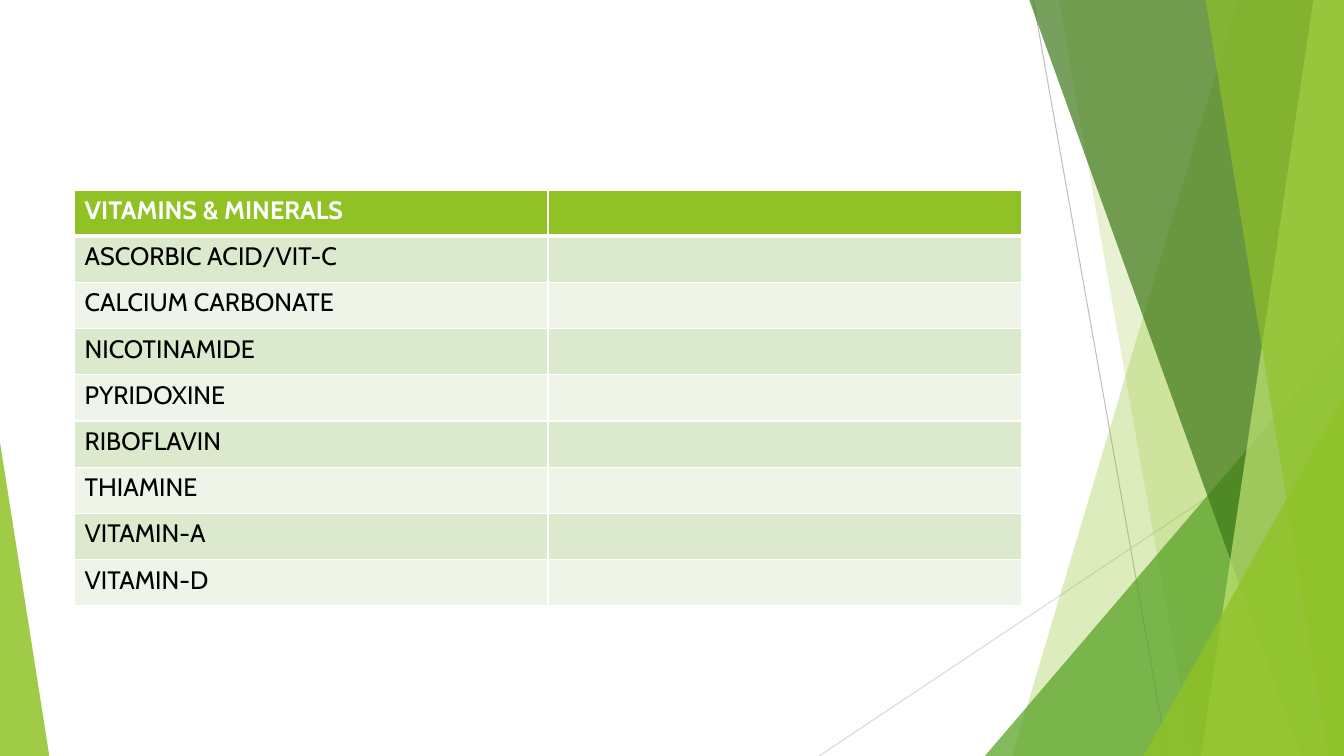
"""Build the vitamins and minerals table slide with its green facet backdrop."""
from lxml.etree import SubElement
from pptx import Presentation
from pptx.dml.color import RGBColor
from pptx.enum.shapes import MSO_CONNECTOR, MSO_SHAPE
from pptx.oxml.ns import qn
from pptx.util import Pt

PX = 9525
WIDTH, HEIGHT = 1280, 720
LIME = "90C226"
ROW_HEIGHT, COLUMN_WIDTH = 44, 451


def paint(color_format, color):
    color_format.rgb = RGBColor.from_string(color)


presentation = Presentation()
presentation.slide_width = WIDTH * PX
presentation.slide_height = HEIGHT * PX
slide = presentation.slides.add_slide(presentation.slide_layouts[6])

rays = [
    (984, 0, 1112, 720, "BFBFBF"),
    (1280, 387, 780, 720, "D9D9D9"),
]
for start_x, start_y, end_x, end_y, color in rays:
    ray = slide.shapes.add_connector(
        MSO_CONNECTOR.STRAIGHT, start_x * PX, start_y * PX, end_x * PX, end_y * PX)
    paint(ray.line.color, color)
    ray.line.width = Pt(0.75)
    SubElement(ray._element.spPr, qn("a:effectLst"))

facets = [
    ("ribbon", (1179, 964), LIME, 30),
    ("ribbon", (1008, 1136), LIME, 20),
    ("triangle", (938, 320, 342, 1), "54A021", 72),
    ("ribbon", (980, 1239), "3F7819", 70),
    ("ribbon", (1251, 1144), "C0E474", 70),
    ("ribbon", (1148, 1265), LIME, 65),
    ("triangle", (1089, 377, 191, 1), LIME, 80),
    ("triangle", (0, 421, 47, 0), LIME, 85),
]
for kind, geometry, color, opacity in facets:
    if kind == "ribbon":
        top_x, bottom_x = geometry
        builder = slide.shapes.build_freeform(top_x, -1, scale=PX)
        builder.add_line_segments([(WIDTH, -1), (WIDTH, HEIGHT), (bottom_x, HEIGHT)])
        shape = builder.convert_to_shape()
    else:
        left, top, width, apex = geometry
        shape = slide.shapes.add_shape(
            MSO_SHAPE.ISOSCELES_TRIANGLE,
            left * PX, top * PX, width * PX, (HEIGHT - top) * PX)
        shape.adjustments[0] = apex
    shape.shadow.inherit = False
    shape.line.fill.background()
    shape.fill.solid()
    paint(shape.fill.fore_color, color)
    fill_color = shape._element.spPr.find(qn("a:solidFill"))[0]
    SubElement(fill_color, qn("a:alpha"), val=str(opacity * 1000))

labels = [
    "VITAMINS & MINERALS",
    "ASCORBIC ACID/VIT-C",
    "CALCIUM CARBONATE",
    "NICOTINAMIDE",
    "PYRIDOXINE",
    "RIBOFLAVIN",
    "THIAMINE",
    "VITAMIN-A",
    "VITAMIN-D",
]
table = slide.shapes.add_table(
    len(labels), 2, 71 * PX, 181 * PX,
    2 * COLUMN_WIDTH * PX, len(labels) * ROW_HEIGHT * PX).table

for row, label in enumerate(labels):
    is_header = row == 0
    row_color = LIME if is_header else ("EEF4E8", "DBE9CD")[row % 2]
    table.cell(row, 0).text_frame.text = label
    for cell in table.rows[row].cells:
        properties = cell._tc.get_or_add_tcPr()
        for side in ("lnL", "lnR", "lnT", "lnB"):
            under_header = (row, side) in ((0, "lnB"), (1, "lnT"))
            border = SubElement(
                properties, qn(f"a:{side}"), w=str(Pt(3 if under_header else 1)))
            border_fill = SubElement(border, qn("a:solidFill"))
            SubElement(border_fill, qn("a:srgbClr"), val="FFFFFF")
        cell.fill.solid()
        paint(cell.fill.fore_color, row_color)
        for run in cell.text_frame.paragraphs[0].runs:
            run.font.name = "Cabin"
            run.font.size = Pt(18)
            run.font.bold = is_header
            paint(run.font.color, "FFFFFF" if is_header else "000000")

presentation.save("out.pptx")
